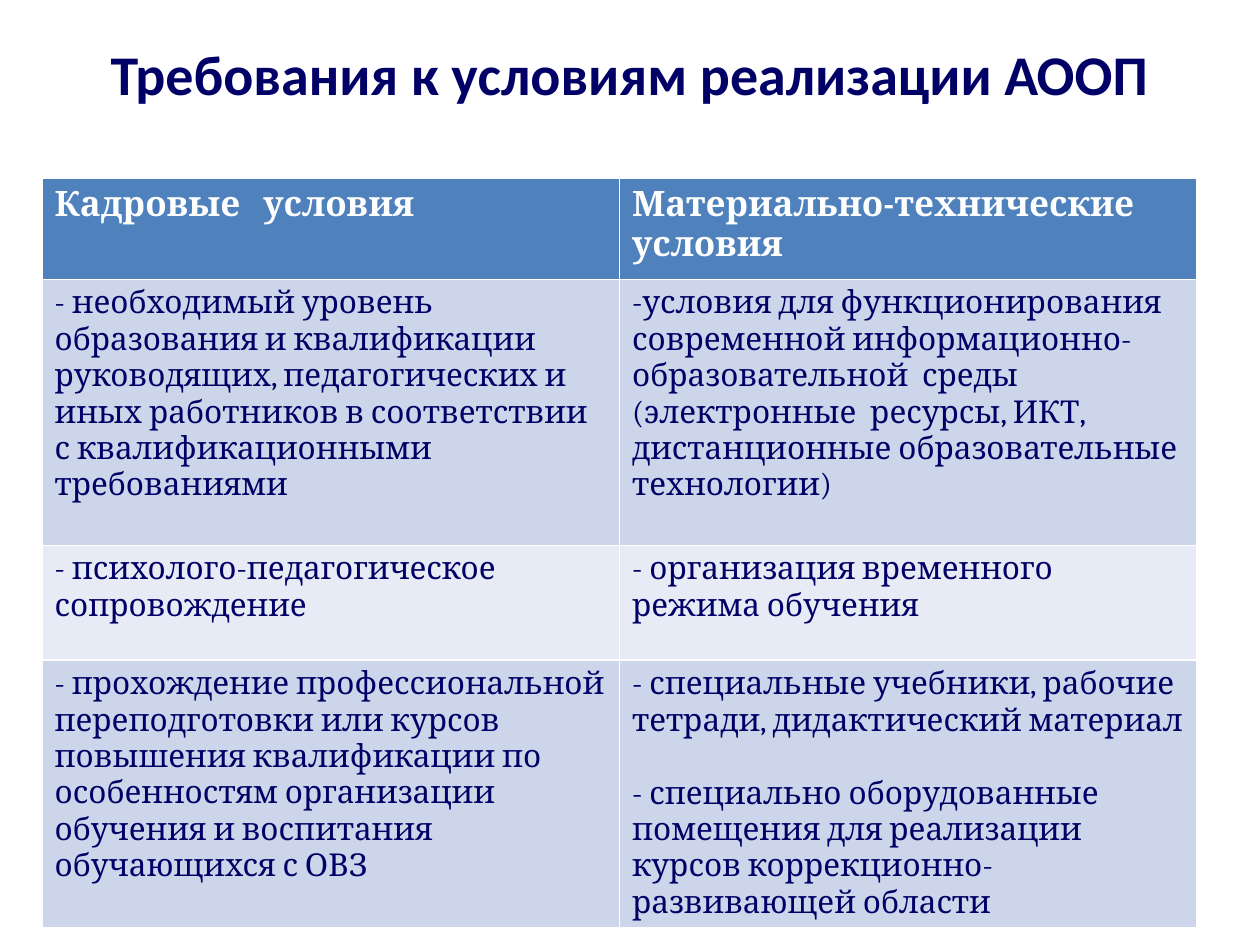
from dataclasses import dataclass

from pptx import Presentation
from pptx.dml.color import RGBColor
from pptx.enum.text import MSO_ANCHOR, PP_ALIGN
from pptx.util import Pt

CENTER = PP_ALIGN.CENTER
MIDDLE = MSO_ANCHOR.MIDDLE
TITLE_ONLY = 5


@dataclass(frozen=True)
class Theme:
    navy: str = "000066"
    white: str = "FFFFFF"
    head: str = "4F81BD"
    bands: tuple = ("CCD5EA", "E7EBF5")
    title_font: str = "Calibri"
    body_font: str = "Cambria"
    title_size: int = 32
    head_size: int = 20
    body_size: int = 18
    gap: int = 21


THEME = Theme()
TITLE = "Требования к условиям реализации АООП"
HEIGHTS = (57.6, 152, 65.6, 152)
# Each cell is a list of blocks; lines of one block stay together.
ROWS = (
    ([["Кадровые   условия"]],
     [["Материально-технические условия"]]),
    ([["- необходимый уровень образования и квалификации руководящих, "
       "педагогических и иных работников в соответствии с "
       "квалификационными требованиями"]],
     [["-условия для функционирования современной "
       "информационно-образовательной  среды (электронные  ресурсы, ИКТ, "
       "дистанционные образовательные технологии)"]]),
    ([["- психолого-педагогическое сопровождение"]],
     [["- организация временного режима обучения"]]),
    ([["- прохождение профессиональной переподготовки или курсов повышения "
       "квалификации по особенностям организации обучения и воспитания "
       "обучающихся с ОВЗ"]],
     [["- специальные учебники, рабочие",
       "тетради, дидактический материал"],
      ["- специально оборудованные помещения для реализации курсов "
       "коррекционно-развивающей области"]]),
)


def style(font, color, **values):
    for name, value in values.items():
        setattr(font, name, value)
    font.color.rgb = RGBColor.from_string(color)


def add_title(slide, text):
    title = slide.shapes.title
    box = {"left": 36, "top": 18, "width": 648, "height": 48}
    for name, value in box.items():
        setattr(title, name, Pt(value))
    frame = title.text_frame
    frame.text = text
    frame.vertical_anchor = MIDDLE
    para = frame.paragraphs[0]
    para.alignment = CENTER
    style(para.runs[0].font, THEME.navy, name=THEME.title_font,
          size=Pt(THEME.title_size), bold=True)


def fill_cell(cell, blocks, fill, color, size, bold):
    """Write the blocks, setting each one after the first apart."""
    cell.fill.solid()
    cell.fill.fore_color.rgb = RGBColor.from_string(fill)
    frame = cell.text_frame
    frame.text = "\n".join(line for block in blocks for line in block)
    paras = iter(frame.paragraphs)
    for b, block in enumerate(blocks):
        for n, para in zip(range(len(block)), paras):
            if b and n == 0:
                para.space_before = Pt(THEME.gap)
            style(para.runs[0].font, color, name=THEME.body_font,
                  size=Pt(size), bold=bold)


def add_grid(slide, rows):
    table = slide.shapes.add_table(
        len(rows), len(rows[0]), Pt(24), Pt(102),
        Pt(660), Pt(sum(HEIGHTS))).table
    for r, (row, height) in enumerate(zip(rows, HEIGHTS)):
        table.rows[r].height = Pt(height)
        if r == 0:
            look = (THEME.head, THEME.white, THEME.head_size, True)
        else:
            band = THEME.bands[(r - 1) % 2]
            look = (band, THEME.navy, THEME.body_size, False)
        for c, blocks in enumerate(row):
            fill_cell(table.cell(r, c), blocks, *look)


def main():
    deck = Presentation()
    deck.slide_width, deck.slide_height = Pt(720), Pt(540)
    slide = deck.slides.add_slide(deck.slide_layouts[TITLE_ONLY])
    add_title(slide, TITLE)
    add_grid(slide, ROWS)
    deck.save("out.pptx")


if __name__ == "__main__":
    main()
